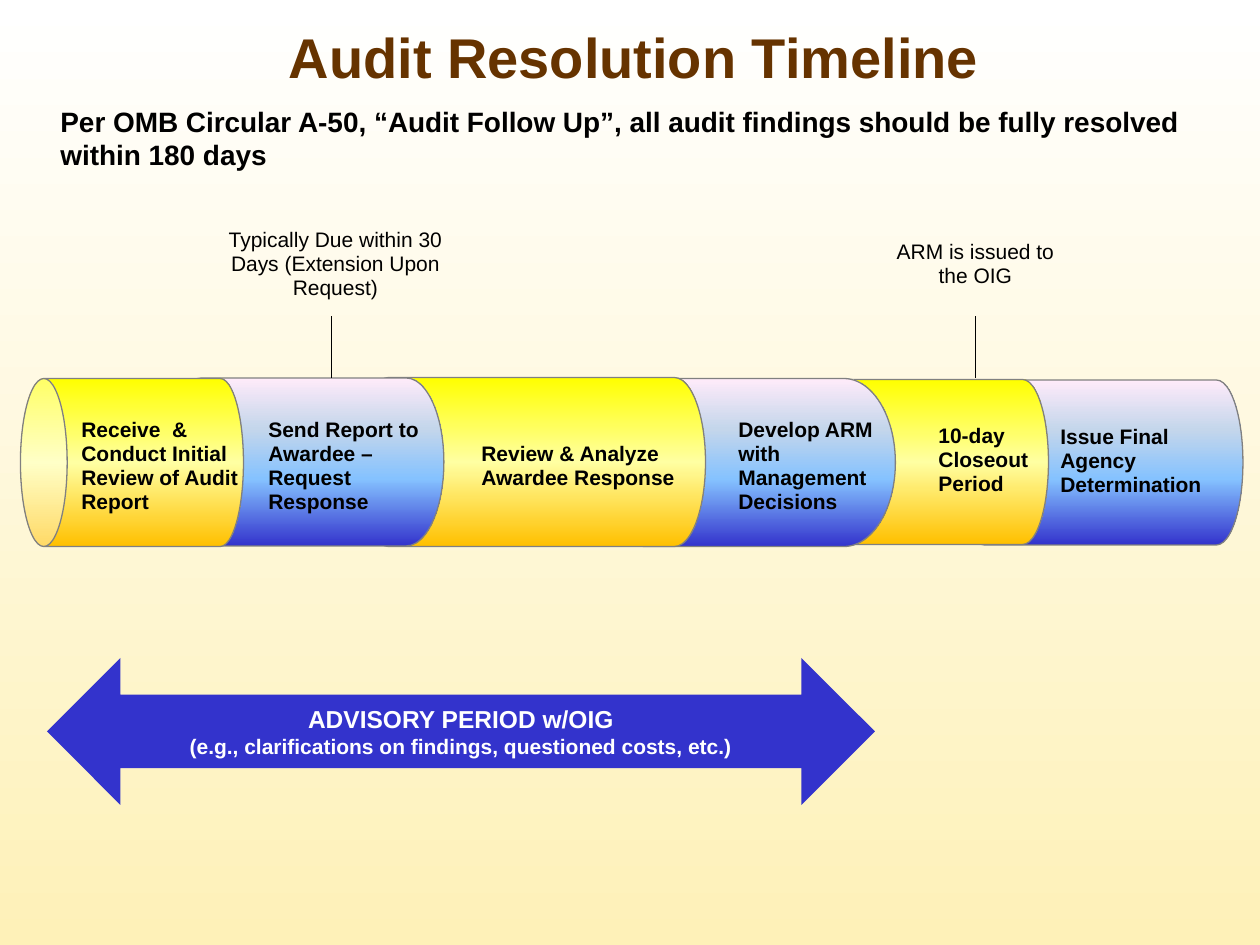
from pptx import Presentation
from pptx.dml.color import RGBColor
from pptx.enum.shapes import MSO_CONNECTOR, MSO_SHAPE
from pptx.enum.text import MSO_ANCHOR, PP_ALIGN
from pptx.oxml.ns import qn
from pptx.util import Emu, Pt
from lxml import etree

CAN, ARROW = MSO_SHAPE.CAN, MSO_SHAPE.LEFT_RIGHT_ARROW
STRAIGHT = MSO_CONNECTOR.STRAIGHT
TOP, MIDDLE = MSO_ANCHOR.TOP, MSO_ANCHOR.MIDDLE
LEFT, CENTER = PP_ALIGN.LEFT, PP_ALIGN.CENTER

SCALE = 914400 // 126
PIPE_MIDDLE = 462
PAGE = [(0, "FFFFFF"), (100, "FEF1B8")]
YELLOW = [(0, "FFC000"), (50, "FFFFA2"), (100, "FFFF00")]
BLUE = [(0, "3333CC"), (40, "85C2FF"), (70, "C4D6EB"), (100, "FFEBFA")]

STAGES = [
    (21, 223, 168, 0.278, YELLOW),
    (164, 280, 168, 0.45, BLUE),
    (358, 348, 169, 0.368, YELLOW),
    (595, 301, 168, 0.613, BLUE),
    (803, 246, 165, 0.313, YELLOW),
    (958, 285, 165, 0.322, BLUE),
]
LABELS = [
    ((69, 412, 214, 110), "Receive  & Conduct Initial Review of Audit Report"),
    ((256, 412, 205, 110), "Send Report to Awardee –Request Response"),
    ((469, 436, 226, 60), "Review & Analyze Awardee Response"),
    ((726, 412, 170, 110), "Develop ARM with Management Decisions"),
    ((926, 418, 158, 86), "10-day Closeout Period"),
    ((1048, 419, 174, 86), "Issue Final Agency Determination"),
]
CALLOUTS = [
    ((210, 248, 251, 32), "Typically Due within 30 Days (Extension Upon Request)", 331),
    ((886, 249, 179, 30), "ARM is issued to the OIG", 975),
]


def px(*values):
    """Convert pixel lengths to EMU."""
    return [Emu(v * SCALE) for v in values]


def rgb(value):
    """Return the colour for a hex string."""
    return RGBColor.from_string(value)


def set_gradient(fill, element, stops, angle):
    """Give a fill a linear gradient with any number of stops."""
    fill.gradient()
    fill.gradient_angle = angle
    gs_list = next(element.iter(qn("a:gsLst")))
    for gs in list(gs_list):
        gs_list.remove(gs)
    for position, color in stops:
        gs = etree.SubElement(gs_list, qn("a:gs"), pos=str(position * 1000))
        etree.SubElement(gs, qn("a:srgbClr"), val=color)


def write(tf, lines, color="000000", bold=True, align=LEFT, spacing=None, **frame):
    """Write (text, size) lines into a text frame."""
    for name, value in {"word_wrap": True, "vertical_anchor": TOP, **frame}.items():
        setattr(tf, name, value)
    for i, (text, size) in enumerate(lines):
        p = tf.paragraphs[0] if i == 0 else tf.add_paragraph()
        p.alignment, p.line_spacing = align, spacing
        r = p.add_run()
        r.text = text
        r.font.color.rgb = rgb(color)
        for name, value in {"name": "Arial", "size": Pt(size), "bold": bold}.items():
            setattr(r.font, name, value)


def add_text(slide, box, text, size, **style):
    """Add a text box holding one paragraph."""
    write(slide.shapes.add_textbox(*px(*box)).text_frame, [(text, size)], **style)


def add_stage(slide, left, length, diameter, cap, stops):
    """Add a can lying on its side, centred on the pipe."""
    x = left + (length - diameter) // 2
    y = PIPE_MIDDLE - length // 2
    sp = slide.shapes.add_shape(CAN, *px(x, y, diameter, length))
    sp.rotation = 270
    sp.adjustments[0] = cap
    sp.shadow.inherit = False
    set_gradient(sp.fill, sp.element, stops, 0)
    sp.line.color.rgb = rgb("808080")
    sp.line.width = Pt(0.75)


def add_callout(slide, box, text, x):
    """Add a note above the pipe and its leader line."""
    inset = Pt(3.6)
    margins = {f"margin_{side}": inset for side in ("left", "top", "right", "bottom")}
    add_text(slide, box, text, 12, bold=False, align=CENTER, spacing=0.95,
             vertical_anchor=MIDDLE, **margins)
    line = slide.shapes.add_connector(STRAIGHT, *px(x, 378, x, 316))
    line.line.color.rgb = rgb("000000")
    line.line.width = Pt(0.5)
    etree.SubElement(line.element.spPr, qn("a:effectLst"))


def add_advisory_arrow(slide, box, lines):
    """Add the double-headed arrow with its caption."""
    sp = slide.shapes.add_shape(ARROW, *px(*box))
    sp.shadow.inherit = False
    sp.fill.solid()
    sp.fill.fore_color.rgb = rgb("3333CC")
    sp.line.fill.background()
    write(sp.text_frame, lines, color="FFFFFF", align=CENTER,
          word_wrap=False, vertical_anchor=MIDDLE)


def main():
    """Build the slide and save it."""
    prs = Presentation()
    prs.slide_width, prs.slide_height = px(1260, 945)
    slide = prs.slides.add_slide(prs.slide_layouts[6])
    set_gradient(slide.background.fill, slide.element, PAGE, 270)
    add_text(slide, (63, 25, 1142, 63), "Audit Resolution Timeline", 32,
             color="663300", align=CENTER, vertical_anchor=MIDDLE)
    add_text(slide, (48, 98, 1208, 94),
             "Per OMB Circular A-50, “Audit Follow Up”, all audit findings "
             "should be fully resolved within 180 days", 16)
    add_advisory_arrow(slide, (47, 658, 828, 147), [
        ("ADVISORY PERIOD w/OIG", 14),
        ("(e.g., clarifications on findings, questioned costs, etc.)", 12),
    ])
    for stage in reversed(STAGES):
        add_stage(slide, *stage)
    for box, text in LABELS:
        add_text(slide, box, text, 12, spacing=0.95)
    for callout in CALLOUTS:
        add_callout(slide, *callout)
    prs.save("out.pptx")


if __name__ == "__main__":
    main()
